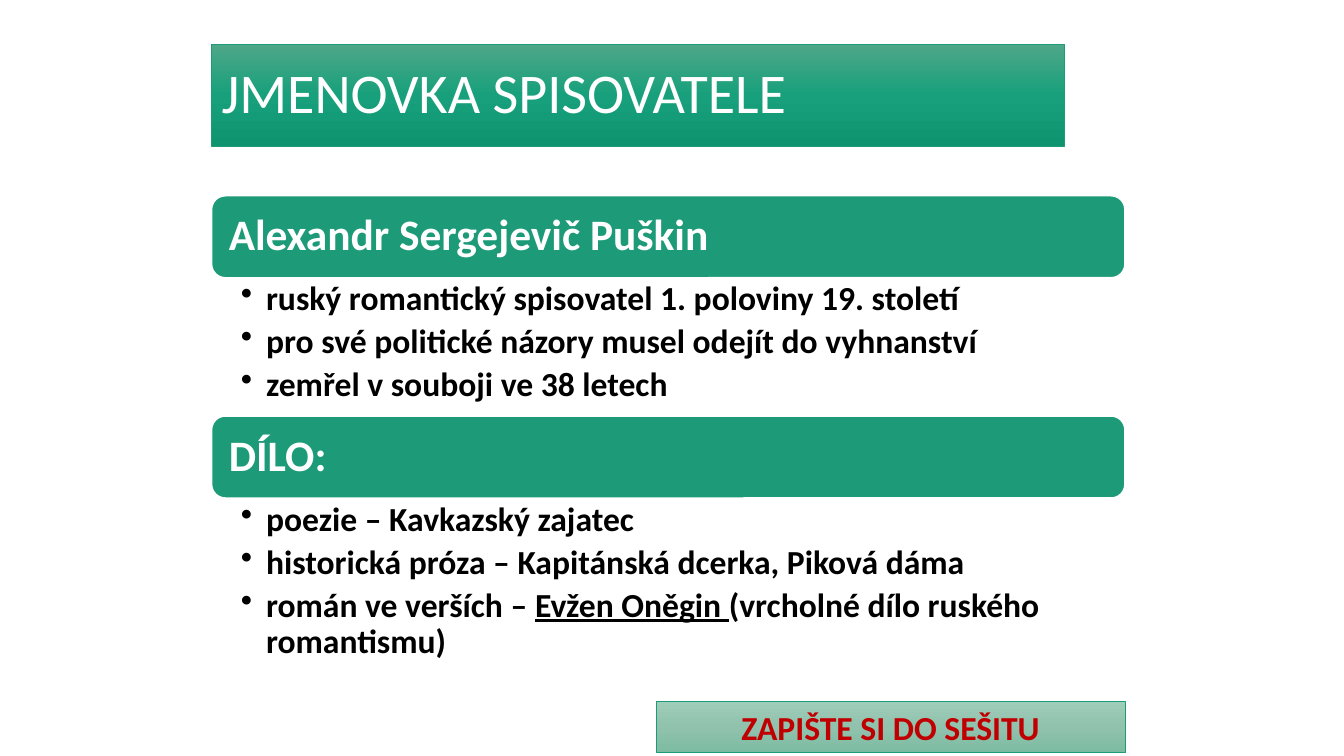
from copy import deepcopy
from dataclasses import dataclass

from lxml import etree
from pptx import Presentation
from pptx.dml.color import RGBColor
from pptx.enum.shapes import MSO_SHAPE
from pptx.enum.text import MSO_ANCHOR, MSO_AUTO_SIZE, PP_ALIGN
from pptx.oxml.ns import qn
from pptx.shapes.autoshape import Shape
from pptx.slide import Slide
from pptx.util import Pt

RECT, ROUND = MSO_SHAPE.RECTANGLE, MSO_SHAPE.ROUNDED_RECTANGLE
MIDDLE, TOP = MSO_ANCHOR.MIDDLE, MSO_ANCHOR.TOP
LEFT, CENTER = PP_ALIGN.LEFT, PP_ALIGN.CENTER
GROW = MSO_AUTO_SIZE.SHAPE_TO_FIT_TEXT

FONT = "Calibri"
GREEN, WHITE, BLACK, RED = "1D9A78", "FFFFFF", "000000", "C00000"
EDGE, WIDTH = 151.2, 652.3
BAR = 58.5


@dataclass
class Banner:
    text: str
    box: tuple[float, float, float, float]
    stops: tuple[str, str, str]
    size: float
    color: str
    bold: bool
    align: PP_ALIGN
    lead: float


@dataclass
class Section:
    """In each item every second piece is underlined."""
    head: str
    top: float
    depth: float
    items: list[tuple[str, ...]]


TITLE = Banner("JMENOVKA SPISOVATELE", (EDGE, 31.7, 609.1, 72.7),
               ("4EA788", "17A07B", "0F9470"), 40, WHITE, False, LEFT, 0.9)
NOTE = Banner("ZAPIŠTE SI DO SEŠITU", (468.7, 501.1, 334.8, 36),
              ("9ECDBA", "91C2AE", "7DBCA3"), 24, RED, True, CENTER, 1)
SECTIONS = [
    Section("Alexandr Sergejevič Puškin", 139.9, 98.6, [
        ("ruský romantický spisovatel 1. poloviny 19. století",),
        ("pro své politické názory musel odejít do vyhnanství",),
        ("zemřel v souboji ve 38 letech",),
    ]),
    Section("DÍLO:", 297.2, 123.8, [
        ("poezie – Kavkazský zajatec",),
        ("historická próza – Kapitánská dcerka, Piková dáma",),
        ("román ve verších – ", "Evžen Oněgin ",
         "(vrcholné dílo ruského romantismu)"),
    ]),
]


def rgb(code: str) -> RGBColor:
    return RGBColor.from_string(code)


def style(para, size: float, color: str, bold: bool,
          align: PP_ALIGN = LEFT, lead: float = 0.9) -> None:
    para.alignment = align
    para.line_spacing = lead
    font = para.font
    font.name, font.size, font.bold = FONT, Pt(size), bold
    font.color.rgb = rgb(color)


def pad(frame, left: float, top: float, right: float, base: float) -> None:
    frame.margin_left, frame.margin_top = Pt(left), Pt(top)
    frame.margin_right, frame.margin_bottom = Pt(right), Pt(base)
    frame.word_wrap = True


def block(slide: Slide, kind: MSO_SHAPE, box: tuple[float, ...],
          line: str, weight: float) -> Shape:
    shape = slide.shapes.add_shape(kind, *map(Pt, box))
    shape.shadow.inherit = False
    shape.line.color.rgb = rgb(line)
    shape.line.width = Pt(weight)
    shape.text_frame.vertical_anchor = MIDDLE
    return shape


def shade(shape: Shape, colors: tuple[str, ...]) -> None:
    """Fill with evenly spaced colours from top to bottom."""
    fill = shape.fill
    fill.gradient()
    fill.gradient_angle = 270
    stops = shape._element.spPr.find(qn("a:gradFill")).find(qn("a:gsLst"))
    while len(stops) < len(colors):
        stops.append(deepcopy(stops[0]))
    for i, (stop, color) in enumerate(zip(fill.gradient_stops, colors)):
        stop.position = i / (len(colors) - 1)
        stop.color.rgb = rgb(color)


def draw_banner(slide: Slide, banner: Banner) -> Shape:
    shape = block(slide, RECT, banner.box, GREEN, 0.5)
    shade(shape, banner.stops)
    frame = shape.text_frame
    pad(frame, 7.2, 3.6, 7.2, 3.6)
    frame.text = banner.text
    style(frame.paragraphs[0], banner.size, banner.color, banner.bold,
          banner.align, banner.lead)
    return shape


def bullet(para) -> None:
    props = para._p.get_or_add_pPr()
    props.set("marL", str(Pt(18)))
    props.set("indent", str(-Pt(18)))
    etree.SubElement(props, qn("a:buChar")).set("char", "•")


def draw_section(slide: Slide, part: Section) -> None:
    bar = block(slide, ROUND, (EDGE, part.top, WIDTH, BAR), WHITE, 1)
    bar.fill.solid()
    bar.fill.fore_color.rgb = rgb(GREEN)
    pad(bar.text_frame, 9.4, 9.4, 9.4, 9.4)
    bar.text_frame.text = part.head
    style(bar.text_frame.paragraphs[0], 31, WHITE, True)

    box = (EDGE, part.top + BAR, WIDTH, part.depth)
    frame = slide.shapes.add_textbox(*map(Pt, box)).text_frame
    frame.vertical_anchor = TOP
    pad(frame, 20.9, 2.9, 17.3, 2.9)
    for i, item in enumerate(part.items):
        para = frame.add_paragraph() if i else frame.paragraphs[0]
        bullet(para)
        style(para, 24, BLACK, True)
        para.space_after = Pt(4.8)
        for j, piece in enumerate(item):
            run = para.add_run()
            run.text = piece
            if j % 2:
                run.font.underline = True


def main() -> None:
    deck = Presentation()
    deck.slide_width, deck.slide_height = Pt(960), Pt(540)
    slide = deck.slides.add_slide(deck.slide_layouts[6])
    draw_banner(slide, TITLE)
    for part in SECTIONS:
        draw_section(slide, part)
    note = draw_banner(slide, NOTE)
    note.text_frame.auto_size = GROW
    deck.save("out.pptx")


if __name__ == "__main__":
    main()
